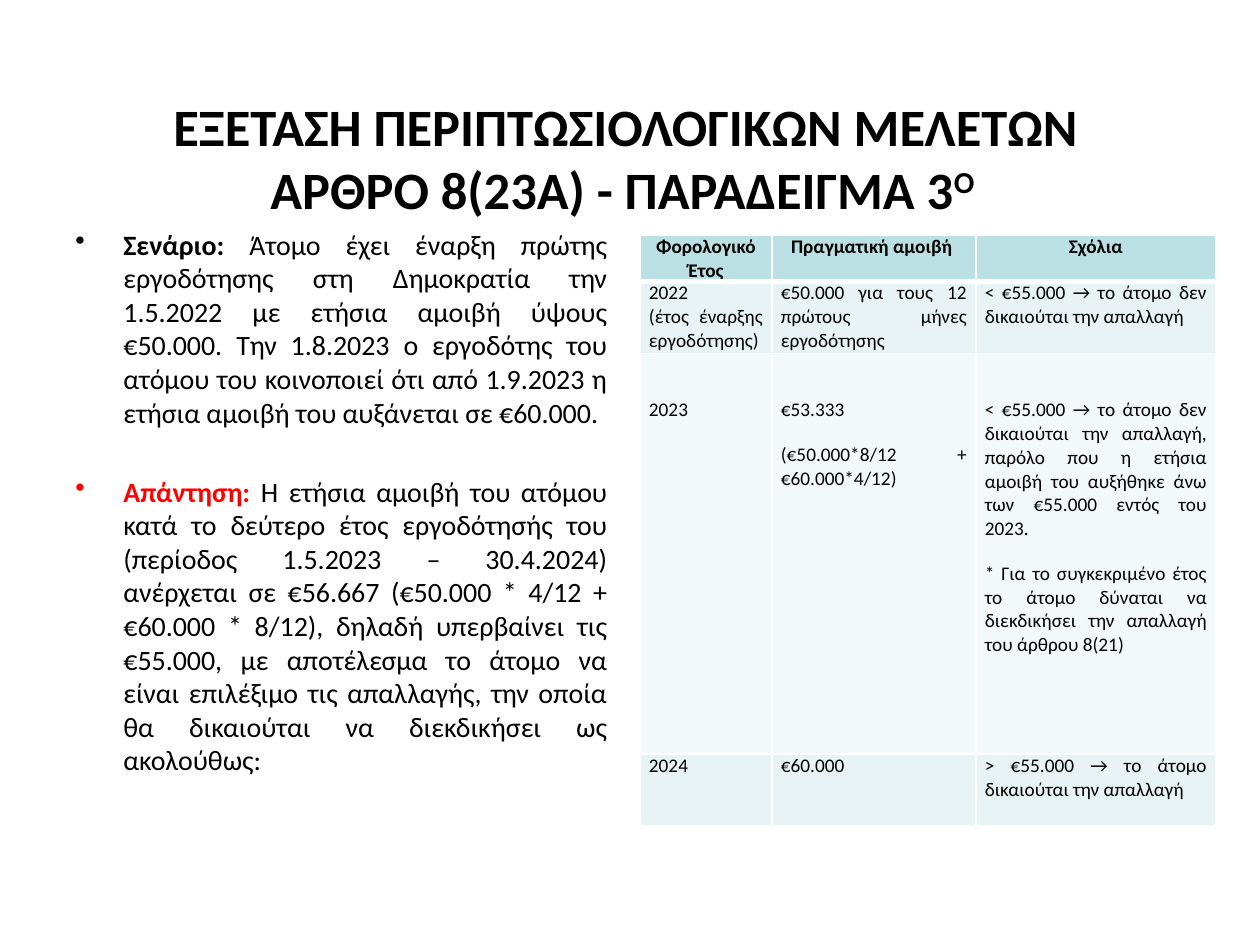
from lxml import etree
from pptx import Presentation
from pptx import util as u
from pptx.dml import color
from pptx.enum import text
from pptx.oxml import ns

PX = 914400 // 126
THEME = {
    "font": "Calibri", "title": 30, "body": 16, "table": 11,
    "ink": "000000", "answer": "FF0000", "border": "FFFFFF",
    "rows": ["BBE0E3", "E7F3F4", "F3F9FA", "E7F3F4"],
}


def format_font(font, size, ink=THEME["ink"], bold=False):
    font.name = THEME["font"]
    font.size = u.Pt(size)
    font.bold = bold
    font.color.rgb = color.RGBColor.from_string(ink)


def add_solid_color(parent, tag, value):
    element = etree.SubElement(parent, ns.qn(tag))
    etree.SubElement(element, ns.qn("a:srgbClr"), val=value)


presentation = Presentation()
presentation.slide_width = u.Inches(10)
presentation.slide_height = u.Inches(7.5)
slide = presentation.slides.add_slide(presentation.slide_layouts[6])

title = slide.shapes.add_textbox(59 * PX, 78 * PX, 1134 * PX, 158 * PX).text_frame
title.word_wrap = True
title.vertical_anchor = text.MSO_ANCHOR.MIDDLE
title.text = "ΕΞΕΤΑΣΗ ΠΕΡΙΠΤΩΣΙΟΛΟΓΙΚΩΝ ΜΕΛΕΤΩΝ\vΑΡΘΡΟ 8(23Α) - ΠΑΡΑΔΕΙΓΜΑ 3"
heading = title.paragraphs[0]
heading.alignment = text.PP_ALIGN.CENTER
ordinal = heading.add_run()
ordinal.text = "Ο "
for run in heading.runs:
    format_font(run.font, THEME["title"], bold=True)
ordinal.font._element.set("baseline", "30000")

case_points = [
    ("Σενάριο:", " Άτομο έχει έναρξη πρώτης εργοδότησης στη Δημοκρατία την 1.5.2022 με ετήσια "
     "αμοιβή ύψους €50.000. Την 1.8.2023 ο εργοδότης του ατόμου του κοινοποιεί ότι από 1.9.2023 "
     "η ετήσια αμοιβή του αυξάνεται σε €60.000. ", THEME["ink"]),
    ("Απάντηση:", " Η ετήσια αμοιβή του ατόμου κατά το δεύτερο έτος εργοδότησής του (περίοδος "
     "1.5.2023 – 30.4.2024) ανέρχεται σε €56.667 (€50.000 * 4/12 + €60.000 * 8/12), δηλαδή "
     "υπερβαίνει τις €55.000, με αποτέλεσμα το άτομο να είναι επιλέξιμο τις απαλλαγής, την οποία "
     "θα δικαιούται να διεκδικήσει ως ακολούθως:", THEME["answer"]),
]
body = slide.shapes.add_textbox(63 * PX, 221 * PX, 557 * PX, 624 * PX).text_frame
body.word_wrap = True
for index, (label, statement, label_color) in enumerate(case_points):
    paragraph = body.add_paragraph() if index else body.paragraphs[0]
    paragraph.alignment = text.PP_ALIGN.JUSTIFY
    if index:
        paragraph.space_before = u.Pt(26)
    properties = paragraph._p.get_or_add_pPr()
    properties.set("marL", str(48 * PX))
    properties.set("indent", str(-48 * PX))
    add_solid_color(properties, "a:buClr", label_color)
    etree.SubElement(properties, ns.qn("a:buChar"), char="•")
    for content, ink, bold in [(label, label_color, True), (statement, THEME["ink"], False)]:
        run = paragraph.add_run()
        run.text = content
        format_font(run.font, THEME["body"], ink, bold)

table_rows = [
    ["Φορολογικό Έτος", "Πραγματική αμοιβή ", "Σχόλια"],
    ["2022\n(έτος έναρξης εργοδότησης)",
     "€50.000 για τους 12 πρώτους μήνες εργοδότησης",
     "< €55.000 → το άτομο δεν δικαιούται την απαλλαγή "],
    ["2023",
     "€53.333\n(€50.000*8/12 + €60.000*4/12)",
     "< €55.000 → το άτομο δεν δικαιούται την απαλλαγή, παρόλο που η ετήσια αμοιβή του "
     "αυξήθηκε άνω των €55.000 εντός του 2023.\n"
     "* Για το συγκεκριμένο έτος το άτομο δύναται να διεκδικήσει την απαλλαγή του άρθρου 8(21)"],
    ["2024", "€60.000", "> €55.000 → το άτομο δικαιούται την απαλλαγή"],
]
column_widths = [132, 204, 240]
row_heights = [46, 72, 401, 72]
top_margins = [0, 0, 45, 0]
paragraph_gaps = [0, 0, 12, 0]
table = slide.shapes.add_table(
    len(row_heights), len(column_widths), 640 * PX, 235 * PX,
    sum(column_widths) * PX, sum(row_heights) * PX).table
for column, width in zip(table.columns, column_widths):
    column.width = width * PX
for row_index, row in enumerate(table.rows):
    row.height = row_heights[row_index] * PX
    header = row_index == 0
    for cell, content in zip(row.cells, table_rows[row_index]):
        cell.margin_left = cell.margin_right = 9 * PX
        cell.margin_top = top_margins[row_index] * PX
        cell.margin_bottom = 0
        cell_properties = cell._tc.get_or_add_tcPr()
        for side in "LRTB":
            thick = (header and side == "B") or (row_index == 1 and side == "T")
            line = etree.SubElement(cell_properties, ns.qn("a:ln" + side),
                                    w=str(u.Pt(3 if thick else 1)))
            add_solid_color(line, "a:solidFill", THEME["border"])
        cell.fill.solid()
        cell.fill.fore_color.rgb = color.RGBColor.from_string(THEME["rows"][row_index])
        cell.text_frame.text = content
        for index, paragraph in enumerate(cell.text_frame.paragraphs):
            paragraph.alignment = text.PP_ALIGN.CENTER if header else text.PP_ALIGN.JUSTIFY
            if index:
                paragraph.space_before = u.Pt(paragraph_gaps[row_index])
            for run in paragraph.runs:
                format_font(run.font, THEME["table"], bold=header)

presentation.save("out.pptx")
